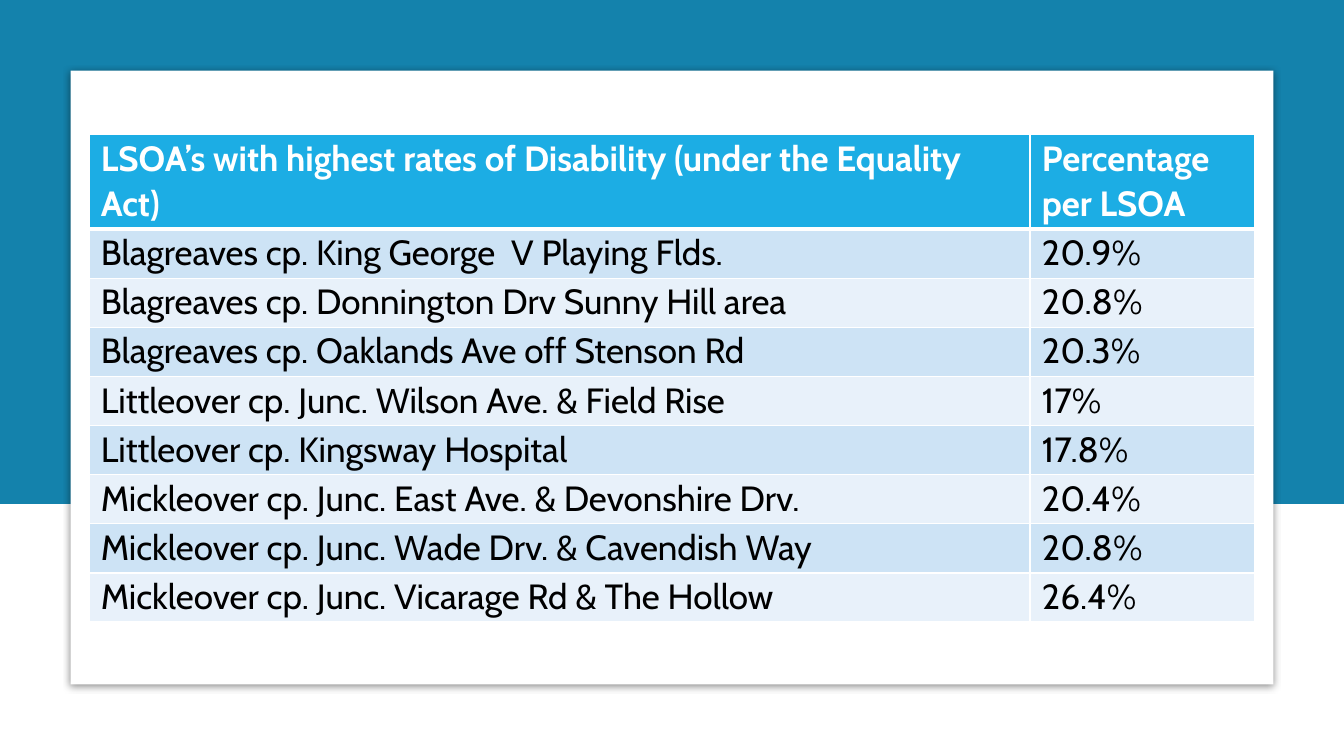
from dataclasses import dataclass

import pptx
import pptx.dml.color
import pptx.enum.shapes
import pptx.oxml
import pptx.oxml.ns
import pptx.util

Pt = pptx.util.Pt


@dataclass(frozen=True)
class Theme:
    font: str = "Cabin"
    size: float = 25
    white: str = "FFFFFF"
    black: str = "000000"
    band: str = "1482AC"
    header: str = "1CADE4"
    odd_row: str = "CDE3F5"
    even_row: str = "E8F1FA"


THEME = Theme()
SLIDE_WIDTH, SLIDE_HEIGHT = 960, 540

HEADINGS = ("LSOA’s with highest rates of Disability (under the Equality Act)",
            "Percentage per LSOA")
RATES = (
    ("Blagreaves cp. King George  V Playing Flds.", "20.9%"),
    ("Blagreaves cp. Donnington Drv Sunny Hill area", "20.8%"),
    ("Blagreaves cp. Oaklands Ave off Stenson Rd", "20.3%"),
    ("Littleover cp. Junc. Wilson Ave. & Field Rise", "17%"),
    ("Littleover cp. Kingsway Hospital", "17.8%"),
    ("Mickleover cp. Junc. East Ave. & Devonshire Drv.", "20.4%"),
    ("Mickleover cp. Junc. Wade Drv. & Cavendish Way", "20.8%"),
    ("Mickleover cp. Junc. Vicarage Rd & The Hollow", "26.4%"),
)


def rgb(colour):
    return pptx.dml.color.RGBColor.from_string(colour)


def write_text(frame, text, *, size=THEME.size, colour=THEME.black, bold=False):
    frame.word_wrap = True
    paragraph = frame.paragraphs[0]
    paragraph.line_spacing = 1.07
    paragraph.space_after = Pt(8)
    run = paragraph.add_run()
    run.text = text
    run.font.name = THEME.font
    run.font.size = Pt(size)
    run.font.bold = bold
    run.font.color.rgb = rgb(colour)


def add_panel(slide, box, fill):
    panel = slide.shapes.add_shape(
        pptx.enum.shapes.MSO_SHAPE.RECTANGLE, *map(Pt, box))
    panel.shadow.inherit = False
    panel.fill.solid()
    panel.fill.fore_color.rgb = rgb(fill)
    panel.line.fill.background()
    return panel


def add_card(slide, box):
    card = add_panel(slide, box, THEME.white)
    effects = card.element.spPr.find(pptx.oxml.ns.qn("a:effectLst"))
    effects.append(pptx.oxml.parse_xml(
        f'<a:outerShdw {pptx.oxml.ns.nsdecls("a")} blurRad="{Pt(5)}" '
        f'dist="{Pt(1.4)}" dir="5400000" algn="t" rotWithShape="0">'
        f'<a:srgbClr val="{THEME.black}"><a:alpha val="43000"/></a:srgbClr>'
        '</a:outerShdw>'))


def set_borders(cell, left=1, right=1, top=1, bottom=1):
    properties = cell._tc.get_or_add_tcPr()
    for side, width in zip("LRTB", (left, right, top, bottom)):
        properties.append(pptx.oxml.parse_xml(
            f'<a:ln{side} {pptx.oxml.ns.nsdecls("a")} w="{Pt(width)}">'
            f'<a:solidFill><a:srgbClr val="{THEME.white}"/></a:solidFill>'
            f'</a:ln{side}>'))


def add_rates_table(slide, box):
    left, top, width, height = box
    header_height, percentage_width = 67.6, 160.6
    rows = (HEADINGS, *RATES)
    table = slide.shapes.add_table(
        len(rows), len(HEADINGS), *map(Pt, box)).table

    # Column widths and row heights
    table.columns[0].width = Pt(width - percentage_width)
    table.columns[1].width = Pt(percentage_width)
    for index, row in enumerate(table.rows):
        row.height = Pt((height - header_height) / len(RATES)
                        if index else header_height)

    # Header and banded rows
    for index, texts in enumerate(rows):
        is_header = index == 0
        banding = THEME.odd_row if index % 2 else THEME.even_row
        for column, text in enumerate(texts):
            cell = table.cell(index, column)
            cell.margin_left = cell.margin_right = Pt(8.5)
            cell.margin_top = cell.margin_bottom = 0
            set_borders(cell, top=3 if index == 1 else 1,
                        bottom=3 if is_header else 1)
            cell.fill.solid()
            cell.fill.fore_color.rgb = rgb(THEME.header if is_header else banding)
            write_text(cell.text_frame, text, bold=is_header,
                       colour=THEME.white if is_header else THEME.black)


def build_rates_slide(slide, box):
    left, top, width, height = box
    margin, inset = 50.4, 13.2
    card_width, card_height = width - 2 * margin, 438.4

    # Blue band behind the upper two thirds
    add_panel(slide, (left, top, width, height * 2 / 3), THEME.band)

    # White card with the table inside
    add_card(slide, (left + margin, top + margin, card_width, card_height))
    add_rates_table(slide, (left + margin + inset, top + 96,
                            card_width - 2 * inset, 348.4))


def main():
    deck = pptx.Presentation()
    deck.slide_width, deck.slide_height = Pt(SLIDE_WIDTH), Pt(SLIDE_HEIGHT)
    slide = deck.slides.add_slide(deck.slide_layouts.get_by_name("Blank"))
    build_rates_slide(slide, (0, 0, SLIDE_WIDTH, SLIDE_HEIGHT))
    deck.save("out.pptx")


if __name__ == "__main__":
    main()
